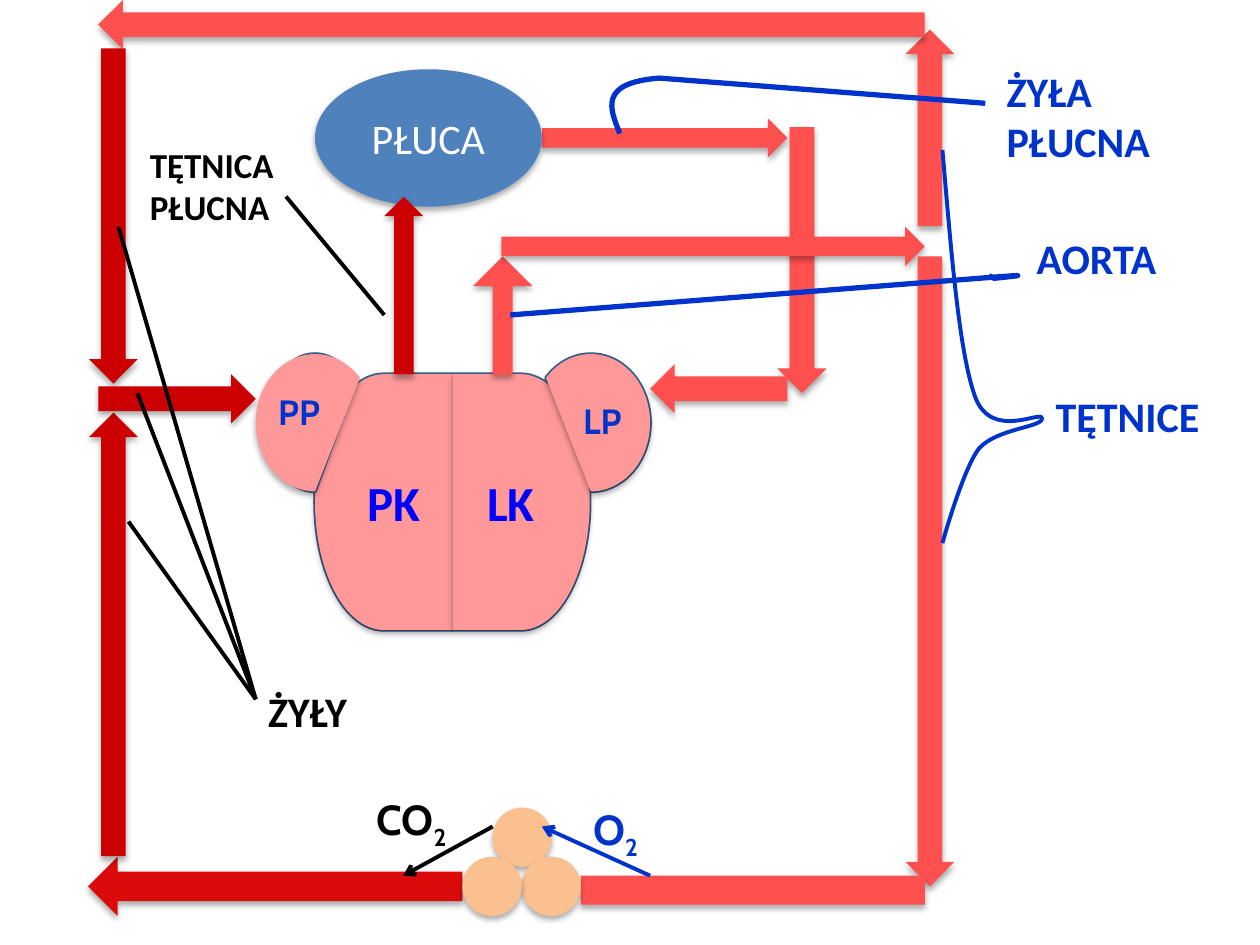
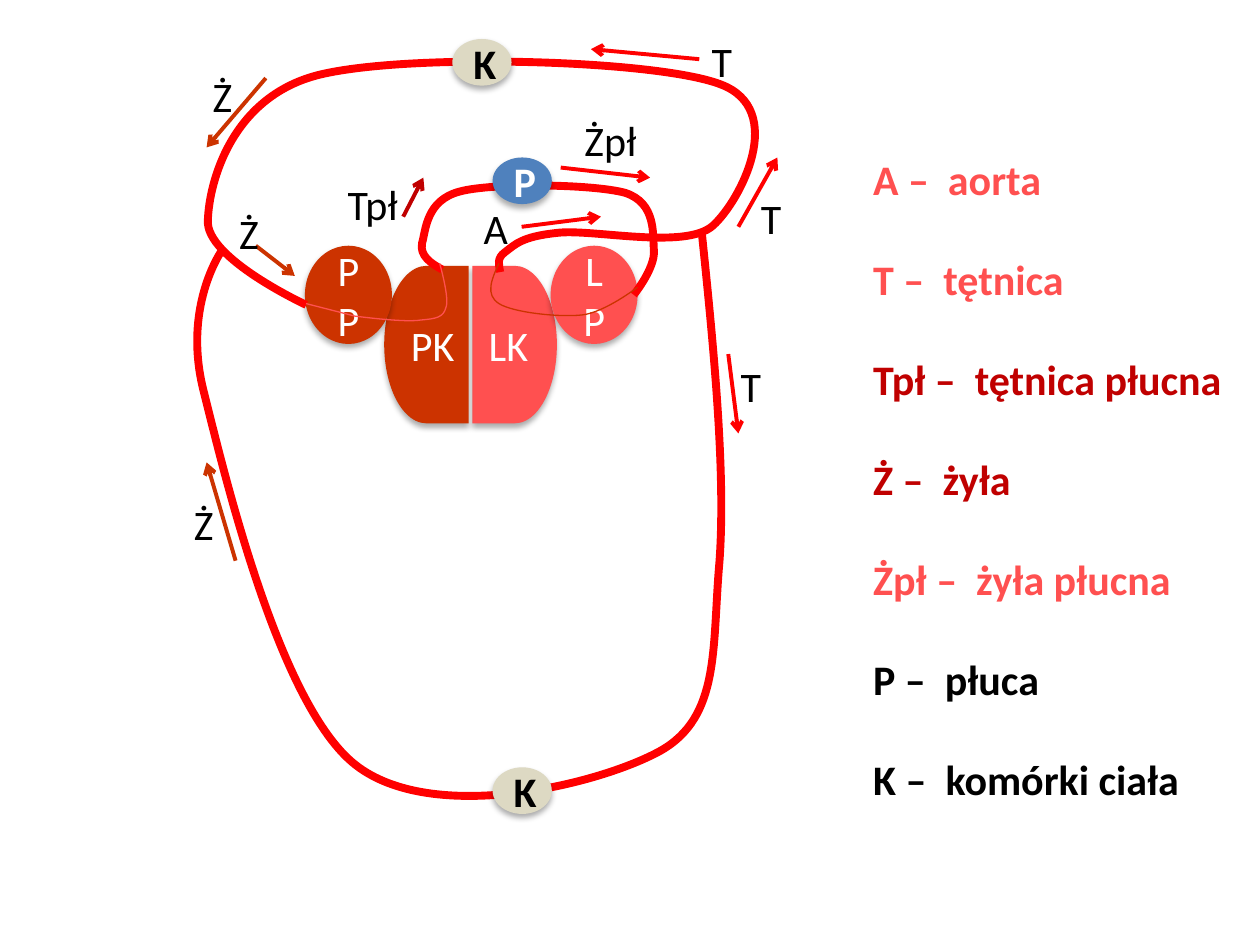
import dataclasses

import lxml.etree
import pptx
import pptx.dml.color
import pptx.enum.shapes
import pptx.enum.text
import pptx.oxml.ns
import pptx.util

Inches = pptx.util.Inches
Pt = pptx.util.Pt
qn = pptx.oxml.ns.qn
SHAPE = pptx.enum.shapes.MSO_SHAPE
ALIGN = pptx.enum.text.PP_ALIGN
ANCHOR = pptx.enum.text.MSO_ANCHOR
FIT = pptx.enum.text.MSO_AUTO_SIZE


@dataclasses.dataclass
class Theme:
    font: str = "Calibri"
    label_font: str = "Cabin"
    arterial: str = "FF5050"
    venous: str = "CC0000"
    body_vein: str = "DB0B0B"
    right_heart: str = "CC3300"
    deep_red: str = "C00000"
    vessel: str = "FF0000"
    heart: str = "FF9999"
    outline: str = "3A5F8C"
    lungs: str = "4F81BD"
    capillary: str = "FAC090"
    body_cells: str = "DDD9C3"
    blue: str = "0033CC"
    chamber_text: str = "0000FF"
    black: str = "000000"
    white: str = "FFFFFF"
    small: int = 20
    normal: int = 24
    large: int = 28
    hairline: float = 0.75
    thin: float = 2.25
    medium: float = 3
    thick: float = 4.5


class Diagram:
    def __init__(self, deck, theme):
        self.deck = deck
        self.theme = theme
        self.page = None

    def new_page(self, layout):
        self.page = self.deck.slides.add_slide(self.deck.slide_layouts[layout])

    def color(self, value):
        return pptx.dml.color.RGBColor.from_string(value)

    def node(self, parent, tag, **attributes):
        return lxml.etree.SubElement(parent, qn(tag), attributes)

    def span(self, para, text, color, size=None, bold=False, font=None, subscript=False):
        span = para.add_run()
        span.text = text
        span.font.name = font or self.theme.font
        span.font.size = Pt(size or self.theme.normal)
        span.font.bold = bold
        span.font.color.rgb = self.color(color)
        if subscript:
            span.font._element.set("baseline", "-25000")

    def stroke(self, shape, color, width):
        shape.line.color.rgb = self.color(color)
        shape.line.width = Pt(width)

    def shape(self, kind, frame, fill, flip="", turn=0, outline=None):
        shape = self.page.shapes.add_shape(kind, *map(Inches, frame))
        shape.fill.solid()
        shape.fill.fore_color.rgb = self.color(fill)
        shape.rotation = turn
        for axis in flip:
            shape.element.spPr.find(qn("a:xfrm")).set("flip" + axis, "1")
        if outline:
            self.stroke(shape, outline, 2)
        else:
            shape.line.fill.background()
        shape.shadow.inherit = False
        if not outline:
            self.cast_shadow(shape)
        return shape

    def cast_shadow(self, shape):
        effects = shape.element.spPr.find(qn("a:effectLst"))
        shadow = self.node(effects, "a:outerShdw", blurRad=str(Pt(3.5)), dist=str(Pt(2.2)),
                           dir="5400000", rotWithShape="0")
        self.node(self.node(shadow, "a:srgbClr", val=self.theme.black), "a:alpha", val="32000")

    def caption(self, shape, text, color, size=None, bold=False):
        shape.text_frame.vertical_anchor = ANCHOR.MIDDLE
        para = shape.text_frame.paragraphs[0]
        para.alignment = ALIGN.CENTER
        self.span(para, text, color, size, bold)

    def arrow(self, frame, fill, flip="", turn=0):
        return self.shape(SHAPE.RIGHT_ARROW, frame, fill, flip, turn)

    def organ(self, frame, fill, text, color, bold=False):
        self.caption(self.shape(SHAPE.OVAL, frame, fill), text, color, bold=bold)

    def line(self, start, end, color, pointed=False):
        line = self.page.shapes.add_connector(
            pptx.enum.shapes.MSO_CONNECTOR.STRAIGHT, *map(Inches, start + end))
        self.stroke(line, color, self.theme.thin)
        properties = line.element.spPr
        if pointed:
            self.node(properties.find(qn("a:ln")), "a:tailEnd", type="arrow")
        self.node(properties, "a:effectLst")

    def curve(self, points, color, width):
        corners = [(Inches(x), Inches(y)) for x, y in points]
        builder = self.page.shapes.build_freeform(*corners[0], scale=1.0)
        builder.add_line_segments(corners[1:], close=False)
        shape = builder.convert_to_shape()
        outline = next(shape.element.iter(qn("a:path")))
        steps = outline.findall(qn("a:lnTo"))
        for first in range(0, len(steps), 3):
            bend = self.node(outline, "a:cubicBezTo")
            for step in steps[first:first + 3]:
                bend.append(step[0])
                outline.remove(step)
        shape.fill.background()
        self.stroke(shape, color, width)
        shape.shadow.inherit = False

    def label(self, frame, lines, color, size=None, bold=True, font=None, subscript=""):
        box = self.page.shapes.add_textbox(*map(Inches, frame))
        box.text_frame.word_wrap = False
        box.text_frame.auto_size = FIT.SHAPE_TO_FIT_TEXT
        for index, text in enumerate(lines.split("\n")):
            para = box.text_frame.add_paragraph() if index else box.text_frame.paragraphs[0]
            self.span(para, text, color, size, bold, font)
        if subscript:
            self.span(para, subscript, color, size, bold, font, True)

    def legend(self, frame, entries):
        title = self.page.shapes.title.element
        title.getparent().remove(title)
        box = self.page.placeholders[1]
        box.left, box.top, box.width, box.height = map(Inches, frame)
        box.text_frame.word_wrap = False
        box.text_frame.auto_size = FIT.NONE
        box.text_frame.vertical_anchor = ANCHOR.TOP
        for index, (text, color) in enumerate(entries):
            para = box.text_frame.add_paragraph() if index else box.text_frame.paragraphs[0]
            para.space_before = Pt(0)
            para.space_after = Pt(28.3)
            properties = para._p.get_or_add_pPr()
            properties.set("marL", "0")
            properties.set("indent", "0")
            self.node(properties, "a:buNone")
            self.span(para, text, color, bold=True)


def draw_heart(diagram):
    theme = diagram.theme
    left_atrium = (4.22, 2.81, 0.94, 1.09)
    ventricles = [("PK", 2.5, "H"), ("LK", 3.59, "")]
    diagram.shape(SHAPE.CHORD, left_atrium, theme.vessel, "HV", outline=theme.outline)
    for outline in (theme.outline, None):
        for name, left, flip in ventricles:
            chamber = diagram.shape(SHAPE.FLOWCHART_DELAY, (left, 2.97, 1.09, 2.03),
                                    theme.heart, flip, outline=outline)
            if not outline:
                diagram.caption(chamber, name, theme.chamber_text, theme.large, True)
    diagram.shape(SHAPE.CHORD, (2.11, 2.81, 0.78, 1.09), theme.venous, "V", outline=theme.outline)
    diagram.shape(SHAPE.CHORD, (2.03, 2.81, 0.94, 1.09), theme.heart, "V")
    diagram.shape(SHAPE.CHORD, left_atrium, theme.heart, "HV")


def draw_block_circulation(diagram):
    theme = diagram.theme
    diagram.new_page(6)
    draw_heart(diagram)
    for frame, fill, flip, turn in [
        ((4.3, 0.94, 1.95, 0.31), theme.arterial, "", 0),
        ((5.31, 1.87, 2.11, 0.39), theme.arterial, "", 90),
        ((5.16, 2.89, 1.09, 0.39), theme.arterial, "H", 0),
    ]:
        diagram.arrow(frame, fill, flip, turn)
    aorta = diagram.arrow((3.52, 2.27, 0.94, 0.47), theme.arterial, turn=270)
    aorta.adjustments[0] = 0.34
    for frame, fill, flip, turn in [
        ((3.98, 1.8, 3.36, 0.31), theme.arterial, "", 0),
        ((6.6, 0.82, 1.56, 0.39), theme.arterial, "", 270),
        ((4.88, 4.34, 5, 0.39), theme.arterial, "", 90),
        ((0.78, 0, 6.56, 0.39), theme.arterial, "H", 0),
        ((0.7, 6.8, 2.97, 0.47), theme.body_vein, "H", 0),
        ((-0.86, 4.84, 3.52, 0.39), theme.venous, "", 270),
        ((-0.43, 1.52, 2.66, 0.39), theme.venous, "", 90),
        ((0.78, 2.97, 1.25, 0.39), theme.venous, "", 0),
    ]:
        diagram.arrow(frame, fill, flip, turn)
    diagram.organ((2.5, 0.55, 1.8, 1.09), theme.lungs, "PŁUCA", theme.white)
    diagram.arrow((2.5, 2.11, 1.41, 0.31), theme.venous, turn=270)

    diagram.curve([(4.92, 1.06), (4.84, 0.86), (4.75, 0.66), (5.23, 0.62),
                   (5.23, 0.62), (7.82, 0.82), (7.82, 0.82)], theme.blue, theme.medium)
    diagram.label((7.89, 0.47, 1.35, 0.91), "ŻYŁA\nPŁUCNA", theme.blue)
    diagram.curve([(4.05, 2.5), (4.05, 2.5), (7.76, 2.21), (7.76, 2.21),
                   (8.4, 2.16), (7.87, 2.21), (7.89, 2.21),
                   (7.9, 2.21), (7.88, 2.2), (7.85, 2.19)], theme.blue, theme.medium)
    diagram.label((8.13, 1.8, 1.16, 0.5), "AORTA", theme.blue)
    diagram.curve([(7.48, 1.19), (7.55, 1.99), (7.61, 2.79), (7.74, 3.15),
                   (7.87, 3.5), (8.27, 3.25), (8.27, 3.32),
                   (8.28, 3.39), (7.91, 3.4), (7.77, 3.56),
                   (7.64, 3.73), (7.48, 4.31), (7.48, 4.31)], theme.blue, theme.thin)
    diagram.label((8.28, 3.05, 1.35, 0.5), "TĘTNICE", theme.blue)
    for vein in [(0.94, 1.8), (1.09, 3.12), (1.02, 4.14)]:
        diagram.line(vein, (2.03, 5.55), theme.black)
    diagram.label((2.03, 5.39, 0.86, 0.5), "ŻYŁY", theme.black)
    diagram.line((3.05, 2.5), (2.27, 1.56), theme.black)
    diagram.label((1.09, 1.09, 1.19, 0.77), "TĘTNICA\nPŁUCNA", theme.black, theme.small)
    diagram.label((4.53, 3.12, 0.55, 0.44), "LP", theme.blue, theme.small, font=theme.label_font)
    diagram.label((2.11, 3.05, 0.57, 0.44), "PP", theme.blue, theme.small, font=theme.label_font)

    diagram.shape(SHAPE.RECTANGLE, (5.86, 5.7, 0.23, 2.73), theme.arterial, turn=90)
    for left, top in [(3.91, 6.41), (4.14, 6.8), (3.67, 6.8)]:
        diagram.shape(SHAPE.OVAL, (left, top, 0.47, 0.47), theme.capillary)
    for gas, frame, start, end, color in [
        ("O", (4.61, 6.33, 0.61, 0.5), (5.16, 6.95), (4.3, 6.56), theme.blue),
        ("CO", (2.89, 6.25, 0.83, 0.5), (3.91, 6.56), (3.2, 6.95), theme.black),
    ]:
        diagram.line(start, end, color, pointed=True)
        diagram.label(frame, gas, color, font=theme.label_font, subscript="2")


def draw_vessel_loops(diagram):
    theme = diagram.theme
    diagram.new_page(1)
    for name, left, fill, flip in [("LK", 3.75, theme.arterial, ""),
                                   ("PK", 3.05, theme.right_heart, "H")]:
        chamber = diagram.shape(SHAPE.FLOWCHART_DELAY, (left, 2.11, 0.67, 1.25), fill, flip)
        diagram.caption(chamber, name, theme.white)
    for name, left, fill in [("LP", 4.37, theme.arterial), ("PP", 2.42, theme.right_heart)]:
        diagram.organ((left, 1.95, 0.69, 0.78), fill, name, theme.white)

    diagram.curve([(3.51, 2.14), (3.42, 2.09), (3.33, 2.03), (3.35, 1.93),
                   (3.38, 1.83), (3.38, 1.59), (3.65, 1.52),
                   (3.91, 1.45), (4.7, 1.46), (4.96, 1.53),
                   (5.21, 1.61), (5.18, 1.86), (5.19, 1.99),
                   (5.2, 2.13), (5.03, 2.34), (5.03, 2.34)], theme.vessel, theme.thick)
    diagram.organ((3.91, 1.25, 0.47, 0.37), theme.lungs, "P", theme.white, True)
    diagram.curve([(3.97, 2.16), (3.96, 2.1), (3.94, 2.05), (4.01, 2),
                   (4.09, 1.94), (4.14, 1.88), (4.41, 1.85),
                   (4.69, 1.81), (5.44, 1.99), (5.66, 1.79),
                   (5.88, 1.59), (6.25, 0.87), (5.72, 0.67),
                   (5.2, 0.47), (3.19, 0.42), (2.51, 0.6),
                   (1.84, 0.78), (1.66, 1.44), (1.65, 1.75),
                   (1.63, 2.05), (2.43, 2.42), (2.43, 2.42)], theme.vessel, theme.thick)
    diagram.curve([(3.96, 2.09), (3.9, 2.22), (3.85, 2.34), (3.96, 2.41),
                   (4.07, 2.48), (4.43, 2.52), (4.62, 2.5),
                   (4.8, 2.48), (5.06, 2.28), (5.06, 2.28)], theme.right_heart, theme.hairline)
    diagram.curve([(5.57, 1.85), (5.67, 2.81), (5.76, 3.77), (5.71, 4.46),
                   (5.65, 5.14), (5.72, 5.69), (5.24, 5.96),
                   (4.75, 6.23), (3.43, 6.55), (2.82, 6.07),
                   (2.22, 5.6), (1.79, 3.8), (1.62, 3.12),
                   (1.44, 2.44), (1.76, 1.99), (1.76, 1.99)], theme.vessel, theme.thick)
    for left, top in [(3.59, 0.31), (3.91, 6.09)]:
        diagram.organ((left, top, 0.47, 0.37), theme.body_cells, "K", theme.black, True)
    diagram.curve([(2.43, 2.41), (2.43, 2.41), (2.82, 2.51), (2.82, 2.51),
                   (2.91, 2.52), (3.22, 2.56), (3.34, 2.54),
                   (3.46, 2.53), (3.52, 2.52), (3.54, 2.44),
                   (3.57, 2.37), (3.49, 2.09), (3.49, 2.09)], theme.arterial, theme.hairline)

    for name, left, top, width, start, end, color in [
        ("Tpł", 2.66, 1.37, 0.61, (3.2, 1.72), (3.36, 1.41), theme.deep_red),
        ("Ż", 1.59, 0.51, 0.36, (2.11, 0.62), (1.64, 1.17), theme.right_heart),
        ("Ż", 1.44, 3.91, 0.36, (1.87, 4.45), (1.64, 3.67), theme.right_heart),
        ("Ż", 1.8, 1.6, 0.36, (2.03, 1.95), (2.34, 2.19), theme.right_heart),
        ("Żpł", 4.54, 0.86, 0.62, (4.45, 1.33), (5.16, 1.41), theme.vessel),
        ("A", 3.74, 1.56, 0.4, (4.14, 1.8), (4.77, 1.72), theme.vessel),
        ("T", 5.94, 1.48, 0.37, (5.86, 1.8), (6.17, 1.25), theme.vessel),
        ("T", 5.55, 0.23, 0.37, (5.55, 0.47), (4.69, 0.39), theme.vessel),
        ("T", 5.78, 2.81, 0.37, (5.78, 2.81), (5.86, 3.44), theme.vessel),
    ]:
        diagram.line(start, end, color, pointed=True)
        diagram.label((left, top, width, 0.5), name, theme.black, bold=False)
    diagram.legend((6.83, 1.17, 3, 5.35), [
        ("A –  aorta", theme.arterial),
        ("T –  tętnica", theme.arterial),
        ("Tpł –  tętnica płucna", theme.deep_red),
        ("Ż –  żyła", theme.deep_red),
        ("Żpł –  żyła płucna", theme.arterial),
        ("P –  płuca", theme.black),
        ("K –  komórki ciała", theme.black),
    ])


def main():
    deck = pptx.Presentation()
    deck.slide_width = Inches(10)
    deck.slide_height = Inches(7.5)
    diagram = Diagram(deck, Theme())
    draw_block_circulation(diagram)
    draw_vessel_loops(diagram)
    deck.save("out.pptx")


if __name__ == "__main__":
    main()
